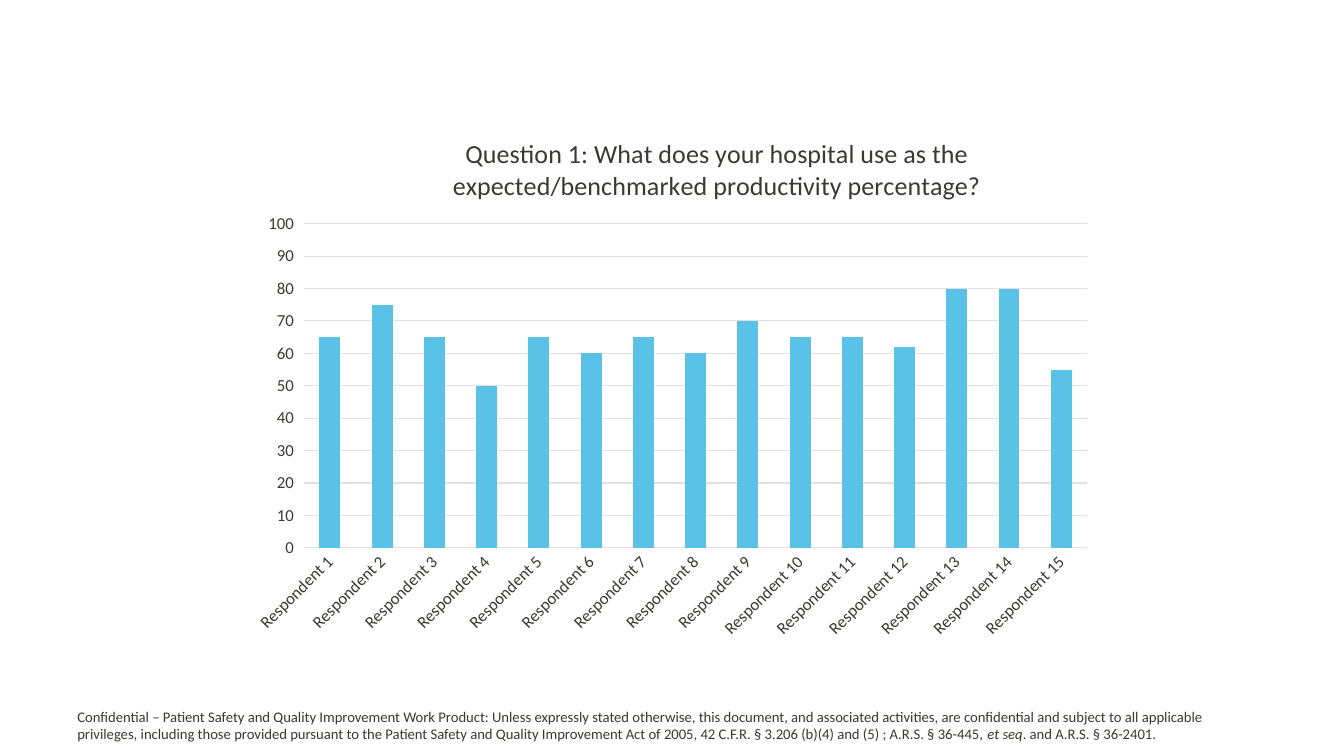
from lxml import etree
from pptx import Presentation
from pptx.chart.data import CategoryChartData
from pptx.dml.color import RGBColor
from pptx.enum.chart import XL_CHART_TYPE, XL_TICK_MARK
from pptx.enum.text import MSO_AUTO_SIZE
from pptx.oxml.ns import qn
from pptx.util import Pt

COLUMN_CLUSTERED = XL_CHART_TYPE.COLUMN_CLUSTERED
TICK_NONE = XL_TICK_MARK.NONE
TICK_OUTSIDE = XL_TICK_MARK.OUTSIDE
FIT_SHAPE = MSO_AUTO_SIZE.SHAPE_TO_FIT_TEXT

TEXT_COLOR = RGBColor(0x3C, 0x38, 0x34)
GRID_COLOR = RGBColor(0xE3, 0xE1, 0xDF)
BAR_COLOR = RGBColor(0x5B, 0xC2, 0xE7)

QUESTION = ("Question 1: What does your hospital use as the "
            "expected/benchmarked productivity percentage?")
PRODUCTIVITY = (65, 75, 65, 50, 65, 60, 65, 60, 70, 65, 65, 62, 80, 80, 55)
CONFIDENTIALITY = (
    ("Confidential – Patient Safety and Quality Improvement Work Product: "
     "Unless expressly stated otherwise, this document, and associated "
     "activities, are confidential and subject to all applicable privileges, "
     "including those provided pursuant to the Patient Safety and Quality "
     "Improvement Act of 2005, 42 C.F.R. § 3.206 (b)(4) and (5) ; "
     "A.R.S. § 36-445, ", False),
    ("et seq", True),
    (". and A.R.S. § 36-2401.", False),
)


def place_chart_part(element, **settings):
    """Give a chart part a manual layout, in fractions of the chart."""
    layout = element.find(qn("c:layout"))
    if layout is None:
        layout = etree.Element(qn("c:layout"))
        element.insert(0, layout)
    manual = etree.SubElement(layout, qn("c:manualLayout"))
    for name, value in settings.items():
        etree.SubElement(manual, qn(f"c:{name}")).set("val", str(value))


class SlideBuilder:
    def __init__(self, slide, font_name, text_color):
        self.slide = slide
        self.font_name = font_name
        self.text_color = text_color

    def style_font(self, font, size, italic=False):
        font.name = self.font_name
        font.size = Pt(size)
        font.bold = False
        font.italic = italic
        font.color.rgb = self.text_color

    def add_text(self, left, top, width, height, runs, size):
        box = self.slide.shapes.add_textbox(Pt(left), Pt(top), Pt(width), Pt(height))
        box.text_frame.word_wrap = True
        box.text_frame.auto_size = FIT_SHAPE
        paragraph = box.text_frame.paragraphs[0]
        for text, italic in runs:
            run = paragraph.add_run()
            run.text = text
            self.style_font(run.font, size, italic)

    def add_column_chart(self, left, top, width, height, title, categories, values):
        data = CategoryChartData()
        data.categories = categories
        data.add_series("Series 1", values)
        chart = self.slide.shapes.add_chart(
            COLUMN_CLUSTERED, Pt(left), Pt(top), Pt(width), Pt(height), data).chart
        self.style_font(chart.font, 10)
        chart.has_legend = False
        self.add_chart_title(chart, title)
        self.style_axes(chart)

        plot = chart.plots[0]
        plot.gap_width = 150
        plot.overlap = -25
        plot.vary_by_categories = False
        fill = plot.series[0].format.fill
        fill.solid()
        fill.fore_color.rgb = BAR_COLOR
        plot_area = chart.element.find(".//" + qn("c:plotArea"))
        place_chart_part(plot_area, layoutTarget="inner", xMode="edge", yMode="edge",
                         x=0.075, y=0.217, w=0.904, h=0.597)

    def add_chart_title(self, chart, text):
        title = chart.chart_title
        run = title.text_frame.paragraphs[0].add_run()
        run.text = text
        self.style_font(run.font, 18.6)
        title.include_in_layout = False
        element = chart.element.find(".//" + qn("c:title"))
        place_chart_part(element, xMode="edge", yMode="edge", x=0.19, y=0.045)

    def style_axes(self, chart):
        category_axis, value_axis = chart.category_axis, chart.value_axis
        for axis in (category_axis, value_axis):
            self.style_font(axis.tick_labels.font, 12)
            axis.minor_tick_mark = TICK_NONE
        category_axis.major_tick_mark = TICK_NONE
        label_body = chart.element.find(
            f".//{qn('c:catAx')}/{qn('c:txPr')}/{qn('a:bodyPr')}")
        label_body.set("rot", "-2700000")
        value_axis.major_tick_mark = TICK_OUTSIDE
        value_axis.minimum_scale = 0
        value_axis.maximum_scale = 100
        value_axis.major_unit = 10
        value_axis.has_major_gridlines = True
        value_axis.format.line.fill.background()
        for line in (category_axis.format.line, value_axis.major_gridlines.format.line):
            line.color.rgb = GRID_COLOR
            line.width = Pt(0.75)


def main():
    presentation = Presentation()
    presentation.slide_width = Pt(960)
    presentation.slide_height = Pt(540)
    blank_layout = presentation.slide_layouts[6]
    slide = presentation.slides.add_slide(blank_layout)
    builder = SlideBuilder(slide, "Calibri", TEXT_COLOR)
    respondents = [f"Respondent {number}" for number in range(1, len(PRODUCTIVITY) + 1)]
    builder.add_column_chart(170.6, 75.6, 619.2, 388, QUESTION, respondents, PRODUCTIVITY)
    builder.add_text(48.2, 501.8, 844.6, 32.4, CONFIDENTIALITY, 10.5)
    presentation.save("out.pptx")


if __name__ == "__main__":
    main()
